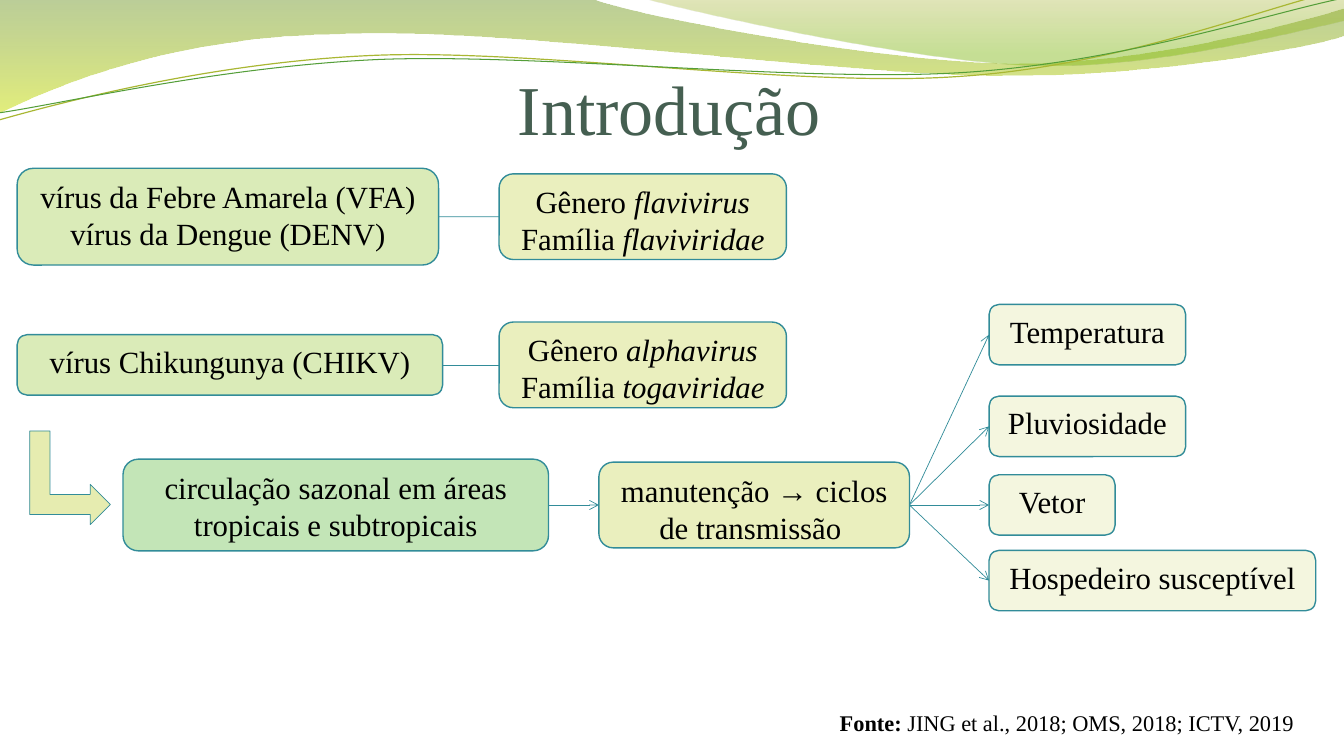
from lxml import etree
from pptx import Presentation
from pptx.dml.color import RGBColor
from pptx.enum.shapes import MSO_CONNECTOR, MSO_SHAPE
from pptx.enum.text import MSO_ANCHOR, MSO_AUTO_SIZE, PP_ALIGN
from pptx.oxml.ns import qn
from pptx.util import Inches, Pt

BLACK = RGBColor(0x00, 0x00, 0x00)
WHITE = RGBColor(0xFF, 0xFF, 0xFF)
TITLE_GREEN = RGBColor(0x45, 0x5F, 0x51)
TEAL = RGBColor(0x32, 0x8C, 0x99)
LIME = RGBColor(0xD2, 0xE7, 0xA9)
STRAW = RGBColor(0xE6, 0xEC, 0xB0)
MINT = RGBColor(0xB7, 0xE0, 0xA8)
CREAM = RGBColor(0xF2, 0xF5, 0xD8)
MOSS = RGBColor(0x69, 0x92, 0x1C)
YELLOW = RGBColor(0xCC, 0xE1, 0x0F)
OLIVE = RGBColor(0x9B, 0xAA, 0x1A)
LEAF = RGBColor(0x81, 0xBA, 0x16)
OLIVE_LINE = RGBColor(0xA9, 0xB7, 0x33)
GREEN_LINE = RGBColor(0x54, 0x9E, 0x39)

SERIF, SANS = "Times New Roman", "Arial"
PLAIN, ITALIC, BOLD, SYMBOL = "plain", "italic", "bold", "symbol"

# Content: each paragraph is a list of (words, style)
TITLE = [[("Introdução", PLAIN)]]
SOURCE = [[("Fonte: ", BOLD), ("JING et al., 2018; OMS, 2018; ICTV, 2019", PLAIN)]]

# Columns (left edges) and rows (centre lines) of the diagram, in inches
VIRUS, SEASON, TAXON, CYCLE, FACTOR = 0.17, 1.22, 4.95, 5.94, 9.81
ROW_VFA, ROW_CHIKV, ROW_FLOW = 2.15, 3.62, 5.01
TALL, SHORT = 0.85, 0.6

# name: (column, row, width, height, fill, paragraphs)
BOXES = {
    "yellow fever": (VIRUS, ROW_VFA, 4.18, 0.96, LIME,
                     [[("vírus da Febre Amarela (VFA)", PLAIN)],
                      [("vírus da Dengue (DENV)", PLAIN)]]),
    "flavivirus": (TAXON, ROW_VFA, 2.85, TALL, STRAW,
                   [[("Gênero ", PLAIN), ("flavivirus", ITALIC)],
                    [("Família ", PLAIN), ("flaviviridae", ITALIC)]]),
    "chikungunya": (VIRUS, ROW_CHIKV, 4.22, SHORT, LIME,
                    [[("vírus Chikungunya (CHIKV)", PLAIN)]]),
    "alphavirus": (TAXON, ROW_CHIKV, 2.85, TALL, STRAW,
                   [[("Gênero ", PLAIN), ("alphavirus", ITALIC)],
                    [("Família ", PLAIN), ("togaviridae", ITALIC)]]),
    "season": (SEASON, ROW_FLOW, 4.22, 0.91, MINT,
               [[("circulação sazonal em áreas tropicais e subtropicais", PLAIN)]]),
    "cycle": (CYCLE, ROW_FLOW, 3.08, TALL, STRAW,
              [[("manutenção ", PLAIN), ("→", SYMBOL),
                (" ciclos de transmissão ", PLAIN)]]),
    "temperature": (FACTOR, 3.32, 1.95, SHORT, CREAM, [[("Temperatura", PLAIN)]]),
    "rain": (FACTOR, 4.23, 1.95, SHORT, CREAM, [[("Pluviosidade", PLAIN)]]),
    "vector": (FACTOR, ROW_FLOW, 1.25, SHORT, CREAM, [[("Vetor", PLAIN)]]),
    "host": (FACTOR, 5.76, 3.24, SHORT, CREAM,
             [[("Hospedeiro susceptível", PLAIN)]]),
}
# (from, to, has arrowhead)
LINKS = [("yellow fever", "flavivirus", False), ("chikungunya", "alphavirus", False),
         ("season", "cycle", True)]
LINKS += [("cycle", factor, True) for factor in ("temperature", "rain", "vector", "host")]

# Header waves: a start point, then corners (x, y) and curves (x1, y1, x2, y2, x, y)
BANDS = [
    ([(0, 0), (5.87, -0.01), (6.34, 0.17, 8.84, 0.63, 10.11, 0.63),
      (11.37, 0.63, 12.77, 0.26, 13.33, 0.09), (13.34, 0.36),
      (13.11, 0.44, 11.59, 0.76, 9.94, 0.75), (8.29, 0.75, 5.09, 0.28, 3.43, 0.34),
      (1.72, 0.36, 0.61, 0.83, -0.02, 1.13)],
     [(0, MOSS, 45), (1, YELLOW, 55)]),
    ([(6.38, -0.01), (6.79, 0.11, 9.09, 0.62, 10.25, 0.65),
      (11.4, 0.69, 12.82, 0.32, 13.33, 0.21), (13.33, 0)],
     [(0, OLIVE, 30), (0.8, LEAF, 45)]),
]
STRANDS = [
    ([(-0.01, 1.19), (0.63, 1.01, 2.1, 0.62, 3.69, 0.55),
      (5.27, 0.48, 7.89, 0.87, 9.49, 0.76), (11.1, 0.66, 12.51, 0.08, 13.3, -0.1)],
     OLIVE_LINE, 0.85),
    ([(-0.01, 1.12), (0.62, 1.03, 2.18, 0.66, 3.77, 0.59),
      (5.37, 0.53, 7.96, 0.82, 9.55, 0.72), (11.14, 0.62, 12.55, 0.14, 13.33, -0.02)],
     GREEN_LINE, 0.75),
]

deck = Presentation()
deck.slide_width, deck.slide_height = Inches(13.33), Inches(7.5)
page = deck.slides.add_slide(deck.slide_layouts[6])


def draw_wave(route, closed):
    """Join the end points, then bend the segments that have control points."""
    ends = [(Inches(part[-2]), Inches(part[-1])) for part in route]
    builder = page.shapes.build_freeform(*ends[0], scale=1.0)
    builder.add_line_segments(ends[1:], close=closed)
    wave = builder.convert_to_shape()
    wave.shadow.inherit = False
    segments = list(wave.element.spPr.iter(qn("a:lnTo")))
    for segment, part in zip(segments, route[1:]):
        if len(part) == 2:
            continue
        curve = etree.Element(qn("a:cubicBezTo"))
        for x, y in zip(part[::2], part[1::2]):
            point = etree.SubElement(curve, qn("a:pt"))
            point.set("x", str(Inches(x) - wave.left))
            point.set("y", str(Inches(y) - wave.top))
        segment.getparent().replace(segment, curve)
    return wave


def set_opacity(color_node, percent):
    etree.SubElement(color_node, qn("a:alpha")).set("val", str(percent * 1000))


def write(box, paragraphs, size, align, color=BLACK, anchor=MSO_ANCHOR.TOP):
    frame = box.text_frame
    frame.word_wrap = True
    frame.vertical_anchor = anchor
    for index, spans in enumerate(paragraphs):
        para = frame.paragraphs[0] if index == 0 else frame.add_paragraph()
        para.alignment = align
        for words, style in spans:
            span = para.add_run()
            span.text = words
            span.font.name = SANS if style == SYMBOL else SERIF
            span.font.size = Pt(size)
            span.font.bold = style == BOLD
            span.font.italic = style == ITALIC
            span.font.color.rgb = color


def draw_shape(kind, left, top, width, height, fill, line, weight):
    shape = page.shapes.add_shape(kind, *map(Inches, (left, top, width, height)))
    shape.shadow.inherit = False
    shape.fill.solid()
    shape.fill.fore_color.rgb = fill
    shape.line.color.rgb = line
    shape.line.width = Pt(weight)
    return shape


# Header waves
for route, stops in BANDS:
    band = draw_wave(route, True)
    band.line.fill.background()
    band.fill.gradient()
    band.fill.gradient_angle = 270
    for stop, (position, color, _) in zip(band.fill.gradient_stops, stops):
        stop.position = position
        stop.color.rgb = color
    gradient = band.element.spPr.find(qn("a:gradFill"))
    for node, (_, _, opacity) in zip(gradient.iter(qn("a:srgbClr")), stops):
        set_opacity(node, opacity)
for route, color, weight in STRANDS:
    strand = draw_wave(route, False)
    strand.fill.background()
    strand.line.color.rgb = color
    strand.line.width = Pt(weight)

# Title
title = page.shapes.add_textbox(*map(Inches, (0.64, 0.23, 12, 1.25)))
title.text_frame.margin_left = title.text_frame.margin_right = 0
title.text_frame.margin_bottom = 0
write(title, TITLE, 50, PP_ALIGN.CENTER, TITLE_GREEN, MSO_ANCHOR.BOTTOM)

# Diagram boxes
placed = {}
for name, (left, middle, width, height, fill, paragraphs) in BOXES.items():
    box = draw_shape(MSO_SHAPE.ROUNDED_RECTANGLE, left, middle - height / 2,
                     width, height, fill, TEAL, 1)
    set_opacity(box.element.spPr.find(qn("a:solidFill"))[0], 82)
    write(box, paragraphs, 22, PP_ALIGN.CENTER)
    placed[name] = box

# Links from the right side (site 3) to the left side (site 1)
for start, end, has_head in LINKS:
    link = page.shapes.add_connector(MSO_CONNECTOR.STRAIGHT, 0, 0, 0, 0)
    link.begin_connect(placed[start], 3)
    link.end_connect(placed[end], 1)
    link.line.color.rgb = TEAL
    link.line.width = Pt(0.5)
    if has_head:
        outline = link._element.spPr.find(qn("a:ln"))
        etree.SubElement(outline, qn("a:tailEnd")).set("type", "arrow")
    etree.SubElement(link._element.spPr, qn("a:effectLst"))

# Bent arrow into the seasonal box
bend = draw_shape(MSO_SHAPE.BENT_UP_ARROW, 0.23, 4.34, 0.93, 0.8, STRAW, TEAL, 0.5)
bend.rotation = 90

# Source line
source = draw_shape(MSO_SHAPE.RECTANGLE, 8.23, 6.99, 4.99, 0.37, WHITE, WHITE, 0.75)
write(source, SOURCE, 16, PP_ALIGN.JUSTIFY)
source.text_frame.auto_size = MSO_AUTO_SIZE.SHAPE_TO_FIT_TEXT

deck.save("out.pptx")
